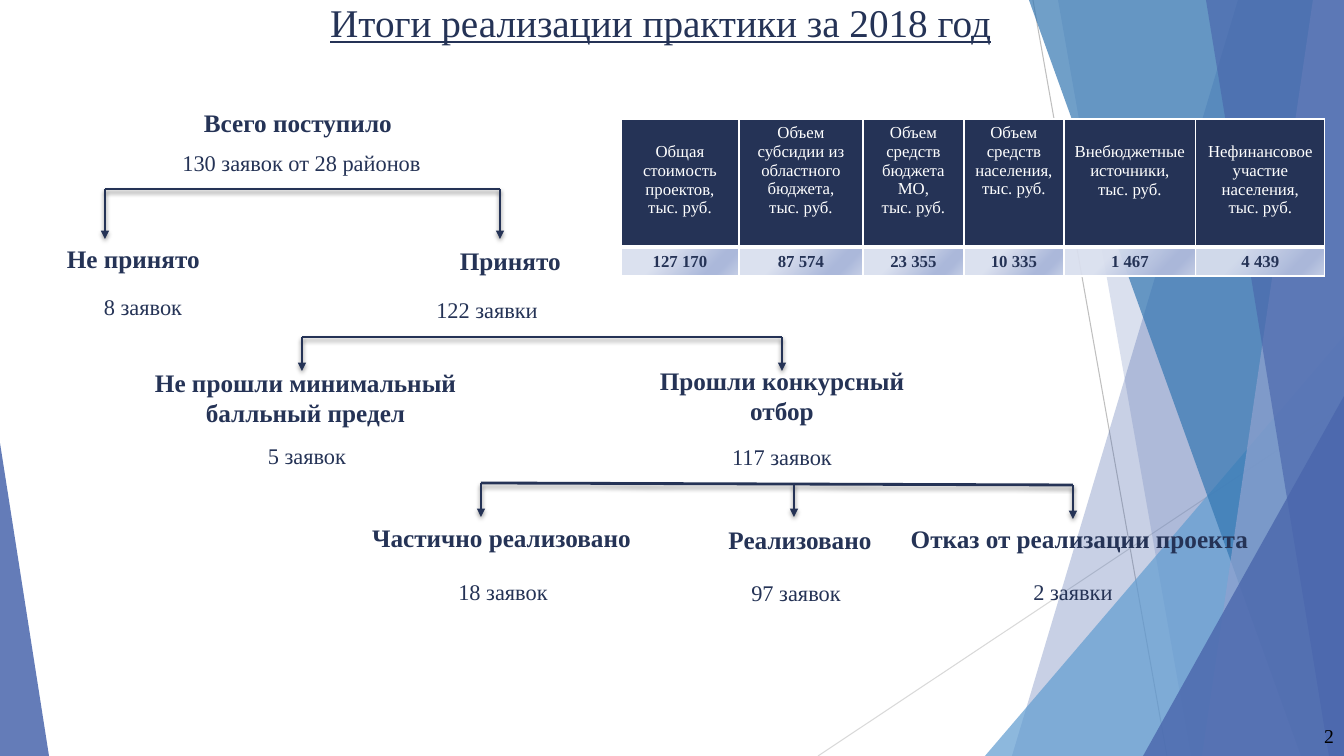
from dataclasses import dataclass

from lxml import etree
from pptx import Presentation
from pptx.dml.color import RGBColor
from pptx.enum import shapes, text
from pptx.oxml import ns
from pptx.util import Pt

TITLE = "Итоги реализации практики за 2018 год"
PAGE = "2"

# label, (left, top, width, height), align
HEADS = [
    ("Всего поступило", (194, 102, 218, 40), "l"),
    ("Не принято", (57, 238, 218, 40), "l"),
    ("Принято", (450, 240, 218, 40), "l"),
    ("Не прошли минимальный балльный предел", (124, 362, 363, 71), "c"),
    ("Прошли конкурсный отбор", (642, 360, 280, 71), "c"),
    ("Частично реализовано", (328, 517, 347, 40), "c"),
    ("Реализовано", (691, 519, 218, 40), "c"),
    ("Отказ от реализации проекта", (895, 518, 369, 40), "c"),
]
COUNTS = [
    ("130 заявок от 28 районов", (154, 135, 295, 55)),
    ("8 заявок", (14, 280, 258, 53)),
    ("122 заявки", (358, 283, 258, 53)),
    ("5 заявок", (194, 427, 226, 57)),
    ("117 заявок", (669, 428, 226, 57)),
    ("18 заявок", (390, 563, 226, 57)),
    ("97 заявок", (683, 564, 226, 57)),
    ("2 заявки", (960, 563, 226, 57)),
]
# points along the bar, length of the arrows below it
FORKS = [
    ([(105, 189), (500, 189)], 50),
    ([(302, 337), (782, 337)], 34),
    ([(481, 483), (794, 483), (1073, 485)], 34),
]
# heading paragraphs, value, column width, lines left free above
COLUMNS = [
    (["Общая стоимость проектов, тыс. руб."], "127 170", 118, 1),
    (["Объем субсидии из областного бюджета,", "тыс. руб."], "87 574", 124, 0),
    (["Объем средств бюджета МО,", "тыс. руб."], "23 355", 101, 0),
    (["Объем средств населения,", "тыс. руб."], "10 335", 100, 0),
    (["Внебюджетные источники,", "тыс. руб."], "1 467", 132, 1),
    (["Нефинансовое участие населения, тыс. руб."], "4 439", 129, 1),
]
ROWS = (128, 29)
LINE = 19
RAYS = [((1033, 0), (1167, 756), "BFBFBF"), ((1344, 406), (818, 756), "D9D9D9")]
# points of a polygon, or (left, top, width, height, apex) of a triangle
FACETS = [
    ([(1238, 0), (1344, 0), (1344, 756), (1012, 756)], "4A66AC", 30),
    ([(1058, 0), (1344, 0), (1344, 756), (1191, 756)], "4A66AC", 20),
    ((985, 336, 359, 420, 1), "629DD1", 72),
    ([(1029, 0), (1344, 0), (1344, 756), (1301, 756)], "3477B2", 70),
    ([(1313, 0), (1344, 0), (1344, 756), (1202, 756)], "90A2CF", 70),
    ([(1206, 0), (1344, 0), (1344, 756), (1329, 756)], "4A66AC", 65),
    ((1143, 396, 201, 360, 1), "4A66AC", 80),
    ((0, 443, 49, 313, 0), "4A66AC", 85),
]


@dataclass(frozen=True)
class Theme:
    font: str = "Times New Roman"
    ink: str = "253356"
    white: str = "FFFFFF"
    black: str = "000000"
    title: int = 28
    head: int = 18
    count: int = 16
    page: int = 14
    cell: int = 12
    grad: tuple = ((34, "DAE0EF", 93), (74, "ACB9DB", 100),
                   (83, "ACB9DB", 100), (100, "C8D1E7", 100))


T = Theme()
SCALE = 12192000 / 1344
ALIGN = {"l": text.PP_ALIGN.LEFT, "c": text.PP_ALIGN.CENTER, "r": text.PP_ALIGN.RIGHT}


def px(*vals):
    return [round(v * SCALE) for v in vals]


def rgb(hue):
    return RGBColor.from_string(hue)


def sub(node, tag, **attrs):
    """Append a child element in the drawing namespace."""
    return etree.SubElement(node, ns.qn("a:" + tag), {k: str(v) for k, v in attrs.items()})


def tint(node, hue, alpha=100):
    clr = sub(node, "srgbClr", val=hue)
    if alpha < 100:
        sub(clr, "alpha", val=alpha * 1000)


def write(frame, lines, size, hue=T.ink, align="c", bold=False, under=False):
    for i, line in enumerate(lines):
        para = frame.add_paragraph() if i else frame.paragraphs[0]
        para.alignment = ALIGN[align]
        run = para.add_run()
        run.text = line
        font = run.font
        font.name, font.size, font.bold = T.font, Pt(size), bold
        font.color.rgb = rgb(hue)
        if under:
            font.underline = True


def label(slide, line, box, size, middle=False, **style):
    frame = slide.shapes.add_textbox(*px(*box)).text_frame
    frame.word_wrap = True
    if middle:
        frame.vertical_anchor = text.MSO_ANCHOR.MIDDLE
    write(frame, [line], size, **style)


def link(slide, start, end, hue, width, shade=False, arrow=False):
    line = slide.shapes.add_connector(shapes.MSO_CONNECTOR.STRAIGHT, *px(*start, *end))
    line.line.color.rgb = rgb(hue)
    line.line.width = Pt(width)
    if arrow:
        sub(line.line._get_or_add_ln(), "tailEnd", type="triangle")
    effect = sub(line._element.spPr, "effectLst")
    if shade:
        drop = sub(effect, "outerShdw", blurRad=Pt(3), dist=Pt(2), dir=5400000, rotWithShape=0)
        tint(drop, T.black, 35)


def facet(slide, form, hue, alpha):
    if isinstance(form, list):
        pen = slide.shapes.build_freeform(*form[0], scale=SCALE)
        pen.add_line_segments(form[1:], close=True)
        shape = pen.convert_to_shape()
    else:
        *box, apex = form
        shape = slide.shapes.add_shape(shapes.MSO_SHAPE.ISOSCELES_TRIANGLE, *px(*box))
        shape.adjustments[0] = apex
    shape.shadow.inherit = False
    shape.line.fill.background()
    shape.fill.solid()
    shape.fill.fore_color.rgb = rgb(hue)
    clr = shape._element.spPr.find(".//" + ns.qn("a:srgbClr"))
    sub(clr, "alpha", val=alpha * 1000)


def border(cell, base):
    props = cell._tc.get_or_add_tcPr()
    for side, width in (("L", 1), ("R", 1), ("T", 1), ("B", base)):
        sub_fill = sub(sub(props, "ln" + side, w=Pt(width)), "solidFill")
        tint(sub_fill, T.white)
    return props


def shade(props):
    fill = sub(props, "gradFill", rotWithShape=1)
    stops = sub(fill, "gsLst")
    for pos, hue, alpha in T.grad:
        tint(sub(stops, "gs", pos=pos * 1000), hue, alpha)
    sub(fill, "lin", ang=2700000, scaled=0)


def totals(slide):
    wide = sum(col[2] for col in COLUMNS)
    grid = slide.shapes.add_table(2, len(COLUMNS), *px(621, 119, wide, sum(ROWS))).table
    for row, high in zip(grid.rows, ROWS):
        row.height = px(high)[0]
    for i, (names, value, width, free) in enumerate(COLUMNS):
        grid.columns[i].width = px(width)[0]
        top, low = grid.cell(0, i), grid.cell(1, i)
        write(top.text_frame, names, T.cell, T.white)
        top.margin_top = px(5 + free * LINE)[0]
        tint(sub(border(top, 3), "solidFill"), T.ink)
        write(low.text_frame, [value], T.cell, bold=True)
        shade(border(low, 1))


def main():
    deck = Presentation()
    deck.slide_width, deck.slide_height = px(1344, 756)
    slide = deck.slides.add_slide(deck.slide_layouts[5])
    for start, end, hue in RAYS:
        link(slide, start, end, hue, 0.75)
    for form in FACETS:
        facet(slide, *form)

    title = slide.shapes.title
    title.left, title.top, title.width, title.height = px(81, -7, 1159, 146)
    title.text_frame.vertical_anchor = text.MSO_ANCHOR.TOP
    write(title.text_frame, [TITLE], T.title, under=True)

    totals(slide)
    for line, box, align in HEADS:
        label(slide, line, box, T.head, align=align, bold=True)
    for line, box in COUNTS:
        label(slide, line, box, T.count, middle=True)
    for ends, drop in FORKS:
        link(slide, ends[0], ends[-1], T.ink, 2, shade=True)
        for x, y in ends:
            link(slide, (x, y), (x, y + drop), T.ink, 2, shade=True, arrow=True)
    label(slide, PAGE, (1042, 716, 302, 40), T.page, middle=True, hue=T.black, align="r")
    deck.save("out.pptx")


if __name__ == "__main__":
    main()
